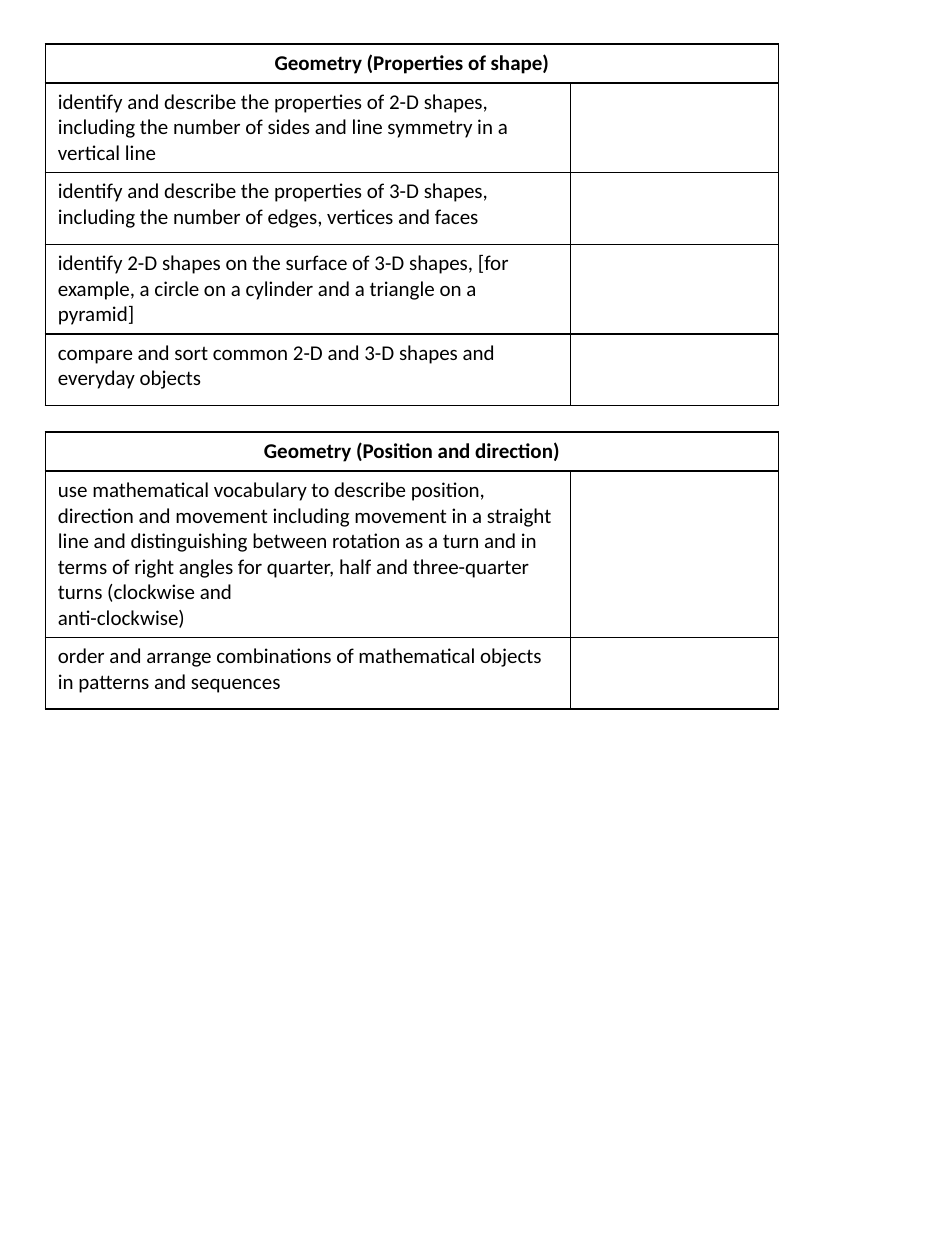
from lxml import etree
from pptx import Presentation
from pptx.dml.color import RGBColor
from pptx.enum.text import PP_ALIGN
from pptx.oxml.ns import qn
from pptx.util import Inches, Pt

CENTER, LEFT = PP_ALIGN.CENTER, PP_ALIGN.LEFT
INK, FONT, SIZE = "000000", "Calibri", 12
WIDE, HIGH = 7.5, 10
EDGE = 0.36
COLS = (4.17, 1.65)
HEAD, ROW = 0.31, 0.57
SIDES = ("a:lnL", "a:lnR", "a:lnT", "a:lnB")

TABLES = [
    (0.35, "Geometry (Properties of shape)", [
        "identify and describe the properties of 2-D shapes, including the number of sides and line symmetry in a vertical line",
        "identify and describe the properties of 3-D shapes, including the number of edges, vertices and faces",
        "identify 2-D shapes on the surface of 3-D shapes, [for example, a circle on a cylinder and a triangle on a pyramid]",
        "compare and sort common 2-D and 3-D shapes and everyday objects",
    ]),
    (3.43, "Geometry (Position and direction)", [
        "use mathematical vocabulary to describe position, direction and movement including movement in a straight line and distinguishing between rotation as a turn and in terms of right angles for quarter, half and three-quarter turns (clockwise and\nanti-clockwise)",
        "order and arrange combinations of mathematical objects in patterns and sequences",
    ]),
]


def color(code):
    return RGBColor.from_string(code)


def style(cell):
    props = cell._tc.get_or_add_tcPr()
    for side in SIDES:
        line = etree.SubElement(props, qn(side), w=str(Pt(1)))
        fill = etree.SubElement(line, qn("a:solidFill"))
        etree.SubElement(fill, qn("a:srgbClr"), val=INK)
    cell.fill.background()


def write(cell, text, bold, align):
    cell.text = text
    for para in cell.text_frame.paragraphs:
        para.alignment = align
        para.font.name = FONT
        para.font.size = Pt(SIZE)
        para.font.bold = bold
        para.font.color.rgb = color(INK)


def draw(slide, top, title, goals):
    tall = HEAD + ROW * len(goals)
    frame = slide.shapes.add_table(
        len(goals) + 1, len(COLS), Inches(EDGE), Inches(top),
        Inches(sum(COLS)), Inches(tall))
    table = frame.table
    table.first_row = table.horz_banding = False
    for col, width in zip(table.columns, COLS):
        col.width = Inches(width)
    for num, row in enumerate(table.rows):
        row.height = Inches(ROW if num else HEAD)
    for cell in table.iter_cells():
        style(cell)
        write(cell, "", False, LEFT)
    table.cell(0, 0).merge(table.cell(0, 1))
    write(table.cell(0, 0), title, True, CENTER)
    for num, goal in enumerate(goals, 1):
        write(table.cell(num, 0), goal, False, LEFT)


def main():
    deck = Presentation()
    deck.slide_width, deck.slide_height = Inches(WIDE), Inches(HIGH)
    slide = deck.slides.add_slide(deck.slide_layouts[6])
    for top, title, goals in TABLES:
        draw(slide, top, title, goals)
    deck.save("out.pptx")


if __name__ == "__main__":
    main()
